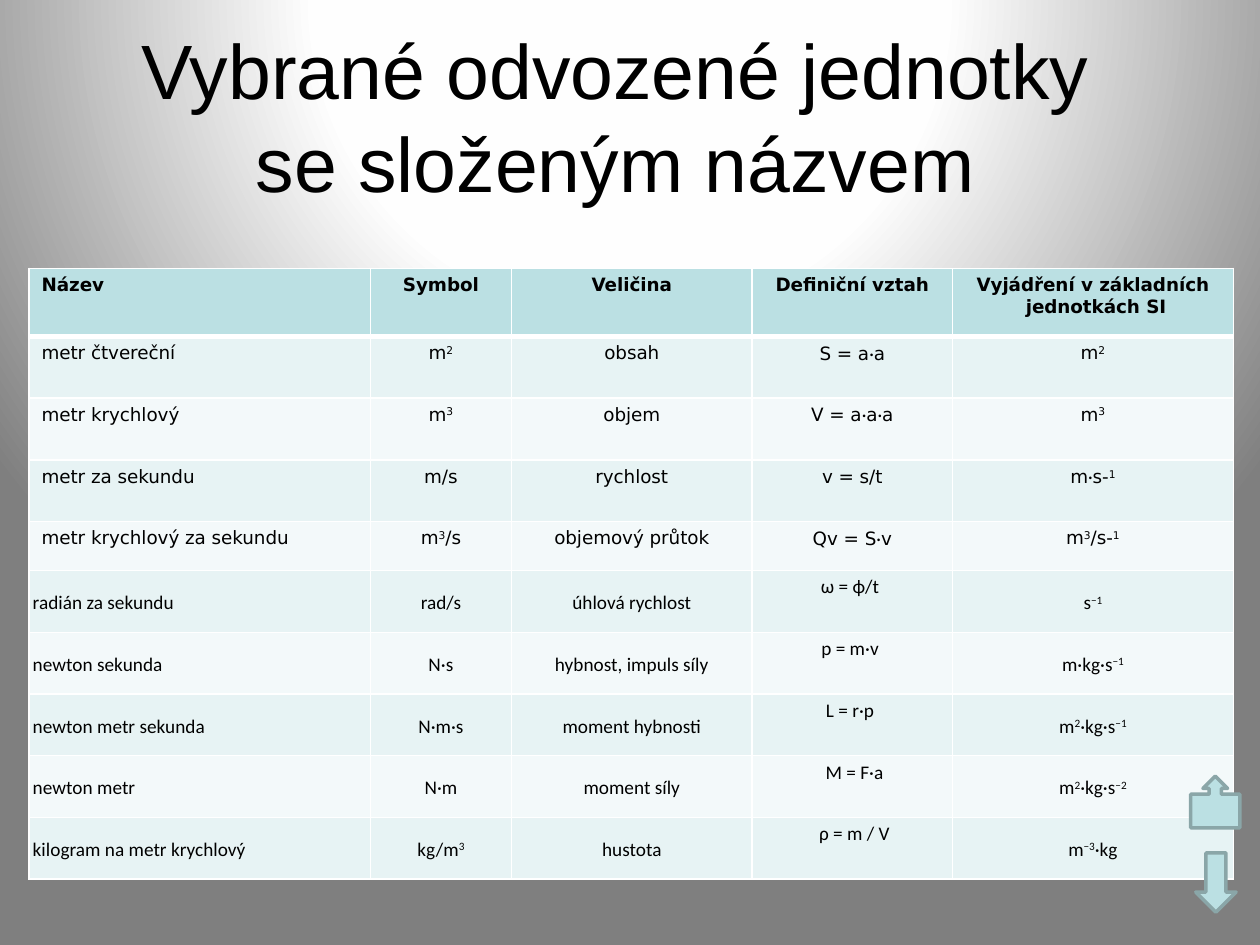
from dataclasses import dataclass

from lxml.etree import SubElement
from pptx import Presentation
from pptx.dml.color import RGBColor
from pptx.enum.shapes import MSO_SHAPE as Shape
from pptx.enum.text import MSO_ANCHOR as Anchor, PP_ALIGN as Align
from pptx.oxml import parse_xml
from pptx.oxml.ns import nsdecls, qn
from pptx.util import Inches, Pt


@dataclass(frozen=True)
class Theme:
    text: str = "000000"
    accent: str = "BBE0E3"
    outline: str = "8AA6A8"
    border: str = "FFFFFF"
    bands: tuple = ("E7F3F4", "F3F9FA")
    background: tuple = ((0, "FFFFFF"), (40, "FEFEFE"), (100, "7F7F7F"))
    title_font: str = "Arial"
    upper_font: str = "DejaVu Sans"
    lower_font: str = "Calibri"
    title_size: float = 44
    upper_size: float = 10.5
    lower_size: float = 11


theme = Theme()


def write_text(paragraph, text, font_name, size, bold=False):
    for index, part in enumerate(text.split("^")):
        for piece in part.replace("·", "|·|").replace("\n", "|\n|").split("|"):
            if piece == "\n":
                paragraph.add_line_break()
            elif piece:
                run = paragraph.add_run()
                run.text = piece
                run.font.name = theme.lower_font if piece == "·" else font_name
                run.font.size = Pt(size)
                run.font.bold = bold
                run.font.color.rgb = RGBColor.from_string(theme.text)
                if index % 2:
                    run.font._element.set("baseline", "30000")


def set_borders(cell, bottom_width):
    properties = cell._tc.get_or_add_tcPr()
    for side, width in (("L", 1), ("R", 1), ("T", 1), ("B", bottom_width)):
        line = SubElement(properties, qn(f"a:ln{side}"), w=str(Pt(width)))
        fill = SubElement(line, qn("a:solidFill"))
        SubElement(fill, qn("a:srgbClr"), val=theme.border)


presentation = Presentation()
presentation.slide_width = Inches(10)
presentation.slide_height = Inches(7.5)
slide = presentation.slides.add_slide(presentation.slide_layouts[5])

stops = "".join(
    f'<a:gs pos="{position * 1000}"><a:srgbClr val="{color}"/></a:gs>'
    for position, color in theme.background
)
slide.element.cSld.insert(0, parse_xml(
    f'<p:bg {nsdecls("p", "a")}><p:bgPr><a:gradFill rotWithShape="1">'
    f'<a:gsLst>{stops}</a:gsLst><a:path path="circle">'
    '<a:fillToRect l="50000" t="-80000" r="50000" b="180000"/></a:path>'
    '</a:gradFill><a:effectLst/></p:bgPr></p:bg>'
))

title = slide.shapes.title
title.left, title.top = Inches(0.43), Inches(0.19)
title.width, title.height = Inches(8.91), Inches(1.45)
title.text_frame.vertical_anchor = Anchor.MIDDLE
title_paragraph = title.text_frame.paragraphs[0]
title_paragraph.alignment = Align.CENTER
write_text(title_paragraph, "Vybrané odvozené jednotky\nse složeným názvem",
           theme.title_font, theme.title_size)

units = [
    ("Název", "Symbol", "Veličina", "Definiční vztah", "Vyjádření v základních\n jednotkách SI"),
    ("metr čtvereční", "m^2", "obsah", "S = a·a", "m^2"),
    ("metr krychlový", "m^3", "objem", "V = a·a·a", "m^3"),
    ("metr za sekundu", "m/s", "rychlost", "v = s/t", "m·s-^1"),
    ("metr krychlový za sekundu", "m^3^/s", "objemový průtok", "Qv = S·v", "m^3^/s-^1"),
    ("radián za sekundu", "rad/s", "úhlová rychlost", "ω = ϕ/t ", "s^−1"),
    ("newton sekunda", "N·s", "hybnost, impuls síly", "p = m·v ", "m·kg·s^−1"),
    ("newton metr sekunda", "N·m·s", "moment hybnosti", "L = r·p ", "m^2^·kg·s^−1"),
    ("newton metr", "N·m", "moment síly", " M = F·a", "m^2^·kg·s^−2"),
    ("kilogram na metr krychlový", "kg/m^3", "hustota", " ρ = m / V", "m^−3^·kg"),
]
column_widths = (2.71, 1.12, 1.91, 1.59, 2.23)
row_heights = (0.54, 0.49, 0.49, 0.49, 0.39) + (0.49,) * 5
first_lower_row = 5
definition_column = 3

table = slide.shapes.add_table(
    len(units), len(column_widths),
    Inches(0.23), Inches(2.13), Inches(9.57), Inches(4.84),
).table
for column, width in zip(table.columns, column_widths):
    column.width = Inches(width)
for row, height in zip(table.rows, row_heights):
    row.height = Inches(height)

for row_index, values in enumerate(units):
    is_header = row_index == 0
    is_lower = row_index >= first_lower_row
    color = theme.accent if is_header else theme.bands[(row_index - 1) % 2]
    for column_index, value in enumerate(values):
        cell = table.cell(row_index, column_index)
        set_borders(cell, 3 if is_header else 1)
        cell.fill.solid()
        cell.fill.fore_color.rgb = RGBColor.from_string(color)
        paragraph = cell.text_frame.paragraphs[0]
        paragraph.alignment = Align.CENTER if column_index else Align.LEFT
        if is_lower:
            is_definition = column_index == definition_column
            margin = Inches(0.01 if is_definition else 0.03)
            cell.margin_left = cell.margin_right = margin
            cell.margin_top = cell.margin_bottom = margin
            cell.vertical_anchor = Anchor.TOP if is_definition else Anchor.MIDDLE
            paragraph.line_spacing = 1.15
            paragraph.space_after = Pt(10)
            write_text(paragraph, value, theme.lower_font, theme.lower_size)
        else:
            write_text(paragraph, value, theme.upper_font, theme.upper_size, is_header)

arrows = [
    (Shape.DOWN_ARROW, 9.49, 6.77, 0.32, 0.47),
    (Shape.UP_ARROW_CALLOUT, 9.45, 6.16, 0.39, 0.41),
]
for kind, *box in arrows:
    arrow = slide.shapes.add_shape(kind, *map(Inches, box))
    arrow.shadow.inherit = False
    arrow.fill.solid()
    arrow.fill.fore_color.rgb = RGBColor.from_string(theme.accent)
    arrow.line.color.rgb = RGBColor.from_string(theme.outline)
    arrow.line.width = Pt(2)

presentation.save("out.pptx")
